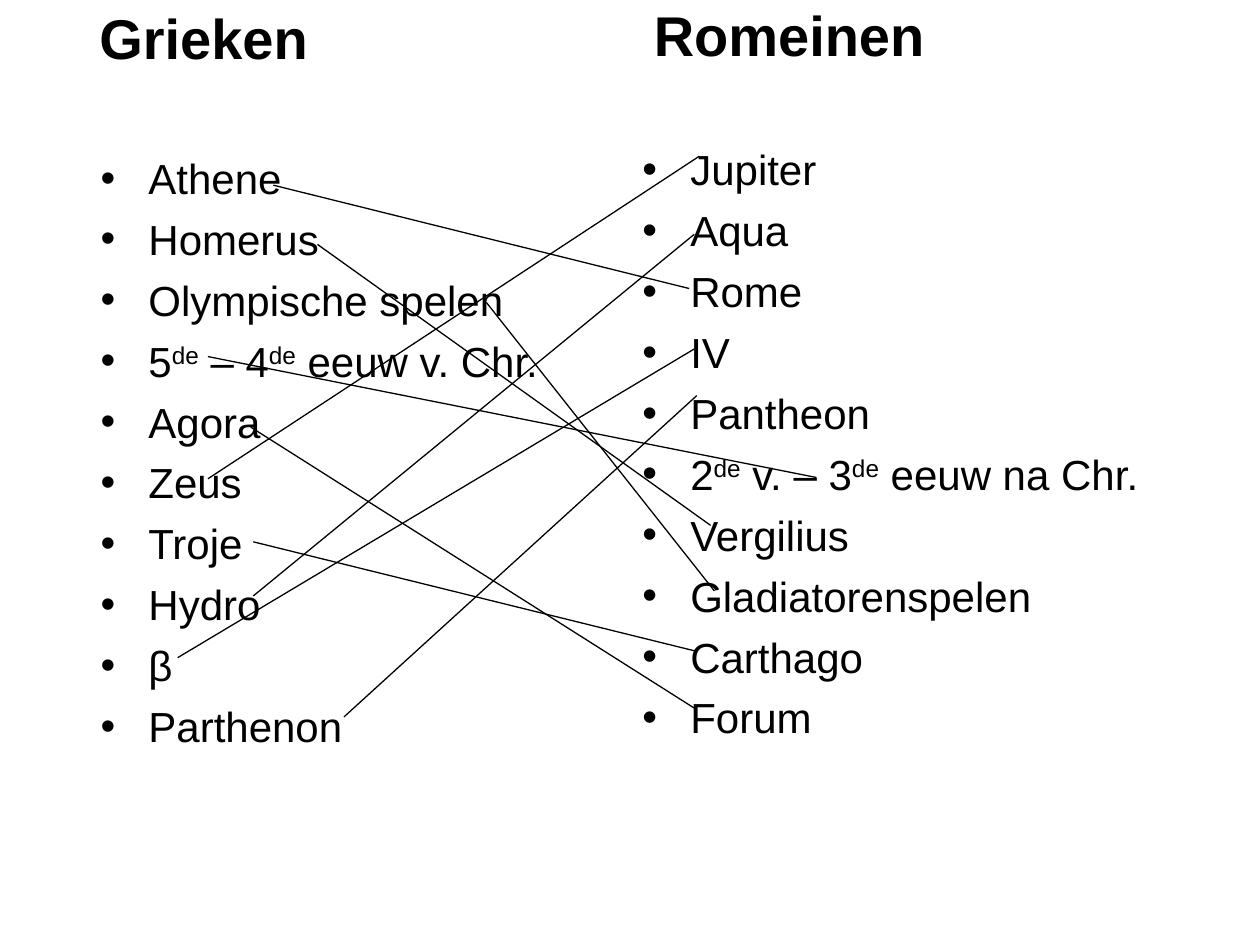
from lxml.etree import SubElement as Sub
from pptx import Presentation as Deck
from pptx.dml.color import RGBColor
from pptx.enum.shapes import MSO_CONNECTOR as Link
from pptx.enum.text import MSO_ANCHOR as Anchor
from pptx.oxml.ns import qn
from pptx.util import Inches, Pt

BLACK = RGBColor(0, 0, 0)
FONT = "Arial"

GREEK = ["Athene", "Homerus", "Olympische spelen", "5^de^ – 4^de^ eeuw v. Chr.", "Agora",
         "Zeus", "Troje", "Hydro", "β", "Parthenon"]
ROMAN = ["Jupiter", "Aqua", "Rome", "IV", "Pantheon", "2^de^ v. – 3^de^ eeuw na Chr.",
         "Vergilius", "Gladiatorenspelen", "Carthago", "Forum"]
PAIRS = [
    (2.17, 1.47, 5.47, 2.29),
    (2.52, 1.94, 5.64, 4.17),
    (1.65, 2.83, 6.48, 3.79),
    (1.99, 3.39, 5.51, 5.62),
    (1.65, 3.8, 5.55, 1.24),
    (3.86, 2.4, 5.67, 4.69),
    (2.01, 4.3, 5.53, 5.17),
    (2.01, 4.73, 5.51, 1.86),
    (1.41, 5.22, 5.51, 2.77),
    (2.73, 5.69, 5.53, 3.14),
]


def add_box(slide, area, anchor):
    """Add an empty wrapping text box and return its frame."""
    frame = slide.shapes.add_textbox(*map(Inches, area)).text_frame
    frame.word_wrap = True
    frame.vertical_anchor = anchor
    return frame


def add_run(para, text, size, bold=False, raised=False):
    """Add one styled run, raised when it is a superscript."""
    run = para.add_run()
    run.text = text
    font = run.font
    font.name, font.size, font.bold = FONT, Pt(size), bold
    font.color.rgb = BLACK
    if raised:
        run._r.get_or_add_rPr().set("baseline", "30000")


def add_head(slide, area, text):
    """Add a bold column heading resting on the bottom of its box."""
    frame = add_box(slide, area, Anchor.BOTTOM)
    add_run(frame.paragraphs[0], text, 32, bold=True)


def set_bullet(para):
    """Give a paragraph a hanging round bullet."""
    props = para._p.get_or_add_pPr()
    props.set("marL", str(Inches(0.38)))
    props.set("indent", str(Inches(-0.38)))
    Sub(props, qn("a:buFont"), typeface=FONT)
    Sub(props, qn("a:buChar"), char="•")


def add_list(slide, area, items):
    """Add a bulleted list; text between carets is superscript."""
    frame = add_box(slide, area, Anchor.TOP)
    frame.margin_top = Inches(0.55)
    for row, item in enumerate(items):
        para = frame.add_paragraph() if row else frame.paragraphs[0]
        para.space_before = Pt(6 if row else 0)
        set_bullet(para)
        for part, text in enumerate(item.split("^")):
            add_run(para, text, 24, raised=part % 2 == 1)


def add_line(slide, ends):
    """Join two matching terms with a thin line."""
    line = slide.shapes.add_connector(Link.STRAIGHT, *map(Inches, ends))
    line.line.color.rgb = BLACK
    line.line.width = Pt(0.75)
    Sub(line._element.spPr, qn("a:effectLst"))


def main():
    """Build the matching exercise and save it."""
    deck = Deck()
    deck.slide_width, deck.slide_height = Inches(10), Inches(7.5)
    slide = deck.slides.add_slide(deck.slide_layouts[6])
    add_head(slide, (0.69, -0.61, 4.23, 1.22), "Grieken")
    add_list(slide, (0.7, 0.66, 4.23, 6.24), GREEK)
    add_head(slide, (5.09, -0.04, 4.25, 0.63), "Romeinen")
    add_list(slide, (5, 0.59, 4.25, 6.55), ROMAN)
    for ends in PAIRS:
        add_line(slide, ends)
    deck.save("out.pptx")


if __name__ == "__main__":
    main()
